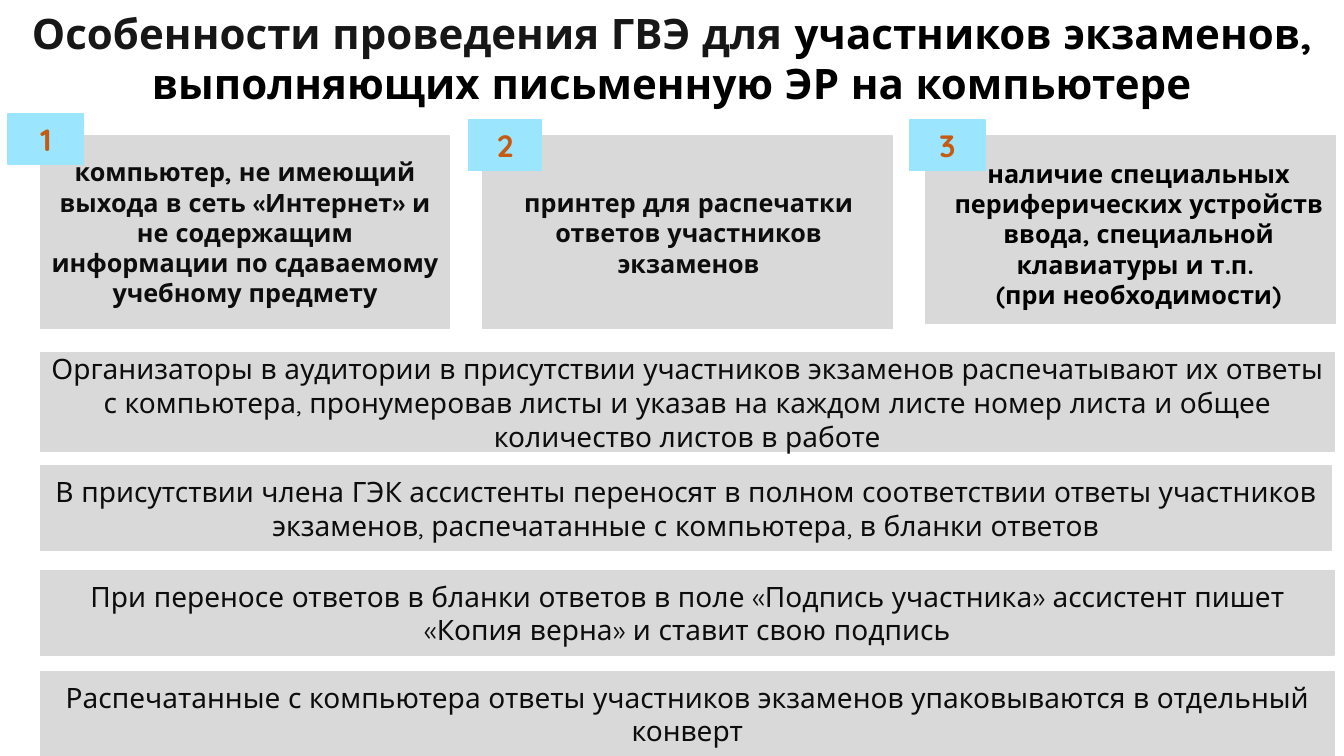
from pptx import Presentation
from pptx import util as u
from pptx.dml.color import RGBColor
from pptx.enum import shapes, text

GREY = RGBColor(0xD9, 0xD9, 0xD9)
SKY = RGBColor(0x9B, 0xE5, 0xFF)
RUST = RGBColor(0xC5, 0x5A, 0x11)
INK = RGBColor(0x0D, 0x0D, 0x0D)
DARK = RGBColor(0x18, 0x17, 0x17)
BLACK = RGBColor(0, 0, 0)

LEFT = 3
PITCH = 32.95
CARD = 30.46
TOP = 18

BADGES = [("1", 0.6, 15.07, 5.63), ("2", 34.88, 15.87, 5.4), ("3", 67.67, 15.87, 5.63)]
CARDS = [
    (25.47, ["компьютер, не имеющий выхода в сеть «Интернет» и не содержащим "
             "информации по сдаваемому учебному предмету"]),
    (25.47, []),
    (24.8, []),
]
LABELS = [
    ((37.58, 24.13, 27.31, 13.47), INK,
     ["принтер для распечатки ответов участников экзаменов"]),
    ((68.94, 20.27, 31.58, 21.6), BLACK,
     ["наличие специальных периферических устройств ввода, специальной клавиатуры и т.п. ",
      "(при необходимости)"]),
]
STEPS = [
    (46.67, 96.25, 13.07,
     "Организаторы в аудитории в присутствии участников экзаменов распечатывают их ответы "
     "с компьютера, пронумеровав листы и указав на каждом листе номер листа "
     "и общее количество листов в работе"),
    (61.6, 96.02, 11.2,
     "В присутствии члена ГЭК ассистенты переносят в полном соответствии ответы участников "
     "экзаменов, распечатанные с компьютера, в бланки ответов"),
    (75.47, 96.25, 11.2,
     "При переносе ответов в бланки ответов в поле «Подпись участника» ассистент пишет "
     "«Копия верна» и ставит свою подпись"),
    (88.8, 96.25, 11.2,
     "Распечатанные с компьютера ответы участников экзаменов упаковываются в отдельный конверт"),
]


class Page:
    font = "Quicksand"

    def __init__(self, deck):
        self.wide, self.high = deck.slide_width, deck.slide_height
        self.slide = deck.slides.add_slide(deck.slide_layouts[5])

    def area(self, x, y, w, h):
        return [int(part * full / 100) for part, full in
                zip((x, y, w, h), (self.wide, self.high) * 2)]

    def letter(self, shape, paras, size, bold, anchor):
        frame = shape.text_frame
        frame.word_wrap = True
        frame.auto_size = text.MSO_AUTO_SIZE.NONE
        frame.vertical_anchor = anchor
        for i, runs in enumerate(paras):
            para = frame.add_paragraph() if i else frame.paragraphs[0]
            para.alignment = text.PP_ALIGN.CENTER
            for words, color in runs:
                run = para.add_run()
                run.text = words
                run.font.name = self.font
                run.font.size = u.Pt(size)
                run.font.bold = bold
                run.font.color.rgb = color

    def title(self, box, runs):
        head = self.slide.shapes.title
        head.left, head.top, head.width, head.height = self.area(*box)
        self.letter(head, [runs], 30, True, text.MSO_ANCHOR.TOP)

    def block(self, box, fill, lines, size, color=INK, bold=True):
        rect = self.slide.shapes.add_shape(shapes.MSO_SHAPE.RECTANGLE, *self.area(*box))
        rect.shadow.inherit = False
        rect.fill.solid()
        rect.fill.fore_color.rgb = fill
        rect.line.color.rgb = fill
        rect.line.width = u.Pt(1)
        self.letter(rect, [[(line, color)] for line in lines], size, bold,
                    text.MSO_ANCHOR.MIDDLE)

    def label(self, box, lines, color):
        note = self.slide.shapes.add_textbox(*self.area(*box))
        self.letter(note, [[(line, color)] for line in lines], 18, True,
                    text.MSO_ANCHOR.TOP)


def main():
    deck = Presentation()
    deck.slide_width, deck.slide_height = u.Inches(13.33), u.Inches(7.5)
    page = Page(deck)
    page.title((0.83, 0.27, 98.35, 14.8), [
        ("Особенности проведения ГВЭ для ", DARK),
        ("участников экзаменов, выполняющих письменную ЭР на компьютере", BLACK),
    ])
    for i, ((tall, lines), (mark, x, y, wide)) in enumerate(zip(CARDS, BADGES)):
        page.block((LEFT + i * PITCH, TOP, CARD, tall), GREY, lines, 18)
        page.block((x, y, wide, 6.67), SKY, [mark], 22, RUST)
    for box, color, lines in LABELS:
        page.label(box, lines, color)
    for y, wide, tall, words in STEPS:
        page.block((LEFT, y, wide, tall), GREY, [words], 20, bold=False)
    deck.save("out.pptx")


if __name__ == "__main__":
    main()
